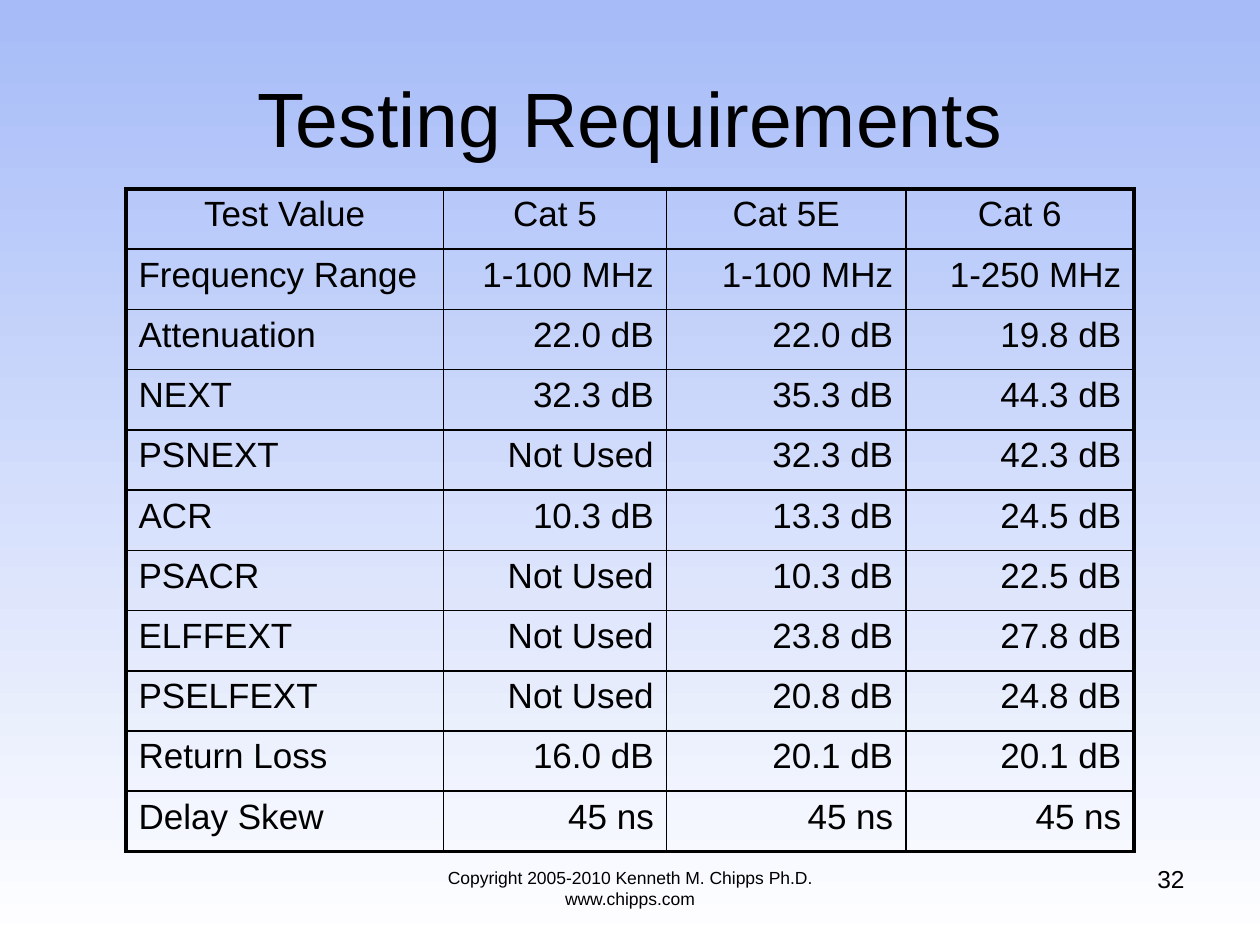
from dataclasses import dataclass

import lxml.etree
import pptx
import pptx.dml.color
import pptx.enum.text
import pptx.oxml.ns
import pptx.util

Pt = pptx.util.Pt
qn = pptx.oxml.ns.qn
RGB = pptx.dml.color.RGBColor.from_string
ALIGN = pptx.enum.text.PP_ALIGN
ANCHOR = pptx.enum.text.MSO_ANCHOR


@dataclass(frozen=True)
class Theme:
    font: str = "Arial"
    ink: str = "000000"
    sky: str = "A6BBF8"
    base: str = "FFFFFF"
    title: int = 44
    body: int = 20
    number: int = 14
    footer: int = 10
    outer_line: float = 2.25
    inner_line: float = 1


THEME = Theme()
COLUMN_WIDTHS = (181.44, 127.44, 136.8, 130.32)
ROW_HEIGHT = 34.44
ROWS = (
    ("Test Value", "Cat 5", "Cat 5E", "Cat 6"),
    ("Frequency Range", "1-100 MHz", "1-100 MHz", "1-250 MHz"),
    ("Attenuation", "22.0 dB", "22.0 dB", "19.8 dB"),
    ("NEXT", "32.3 dB", "35.3 dB", "44.3 dB"),
    ("PSNEXT", "Not Used", "32.3 dB", "42.3 dB"),
    ("ACR", "10.3 dB", "13.3 dB", "24.5 dB"),
    ("PSACR", "Not Used", "10.3 dB", "22.5 dB"),
    ("ELFFEXT", "Not Used", "23.8 dB", "27.8 dB"),
    ("PSELFEXT", "Not Used", "20.8 dB", "24.8 dB"),
    ("Return Loss", "16.0 dB", "20.1 dB", "20.1 dB"),
    ("Delay Skew", "45 ns", "45 ns", "45 ns"),
)


def paint_background(s):
    fill = s.background.fill
    fill.gradient()
    fill.gradient_angle = 270
    for stop, color, position in zip(fill.gradient_stops, (THEME.sky, THEME.base), (0, 1)):
        stop.color.rgb = RGB(color)
        stop.position = position


def write(tf, text, size, align):
    p = tf.paragraphs[0]
    p.text = text
    p.alignment = align
    p.font.name = THEME.font
    p.font.size = Pt(size)
    p.font.color.rgb = RGB(THEME.ink)
    return p


def add_text(s, box, text, size, align, anchor=ANCHOR.TOP):
    tf = s.shapes.add_textbox(*map(Pt, box)).text_frame
    tf.word_wrap = True
    tf.vertical_anchor = anchor
    write(tf, text, size, align)


def space_before_percent(p, percent):
    spacing = lxml.etree.Element(qn("a:spcBef"))
    lxml.etree.SubElement(spacing, qn("a:spcPct"), val=str(percent * 1000))
    p._p.get_or_add_pPr().insert(0, spacing)


def set_borders(cell, outer_sides):
    """Draw all four sides, heavier where the side is on the table's edge."""
    tcPr = cell._tc.get_or_add_tcPr()
    for side, outer in zip("LRTB", outer_sides):
        width = THEME.outer_line if outer else THEME.inner_line
        ln = lxml.etree.SubElement(tcPr, qn(f"a:ln{side}"), w=str(Pt(width)))
        fill = lxml.etree.SubElement(ln, qn("a:solidFill"))
        lxml.etree.SubElement(fill, qn("a:srgbClr"), val=THEME.ink)


def cell_alignment(row, column):
    if row == 0:
        return ALIGN.CENTER
    return ALIGN.LEFT if column == 0 else ALIGN.RIGHT


def add_requirements_table(s, left, top):
    last_row, last_column = len(ROWS) - 1, len(COLUMN_WIDTHS) - 1
    table = s.shapes.add_table(
        len(ROWS), len(COLUMN_WIDTHS), Pt(left), Pt(top),
        Pt(sum(COLUMN_WIDTHS)), Pt(ROW_HEIGHT * len(ROWS)),
    ).table
    table.first_row = table.horz_banding = False
    for column, width in zip(table.columns, COLUMN_WIDTHS):
        column.width = Pt(width)
    for i, values in enumerate(ROWS):
        table.rows[i].height = Pt(ROW_HEIGHT)
        for j, value in enumerate(values):
            cell = table.cell(i, j)
            p = write(cell.text_frame, value, THEME.body, cell_alignment(i, j))
            space_before_percent(p, 20)
            set_borders(cell, (j == 0, j == last_column, i == 0, i == last_row))
            cell.fill.background()


def main():
    prs = pptx.Presentation()
    prs.slide_width, prs.slide_height = Pt(720), Pt(540)
    s = prs.slides.add_slide(prs.slide_layouts[6])
    paint_background(s)
    add_text(s, (216, 491.76, 288, 37.44),
             "Copyright 2005-2010 Kenneth M. Chipps Ph.D. www.chipps.com",
             THEME.footer, ALIGN.CENTER)
    add_text(s, (516.24, 490.32, 167.76, 37.44), "32", THEME.number, ALIGN.RIGHT)
    add_text(s, (36, 21.6, 648, 90), "Testing Requirements",
             THEME.title, ALIGN.CENTER, ANCHOR.MIDDLE)
    add_requirements_table(s, 72, 108)
    prs.save("out.pptx")


if __name__ == "__main__":
    main()
